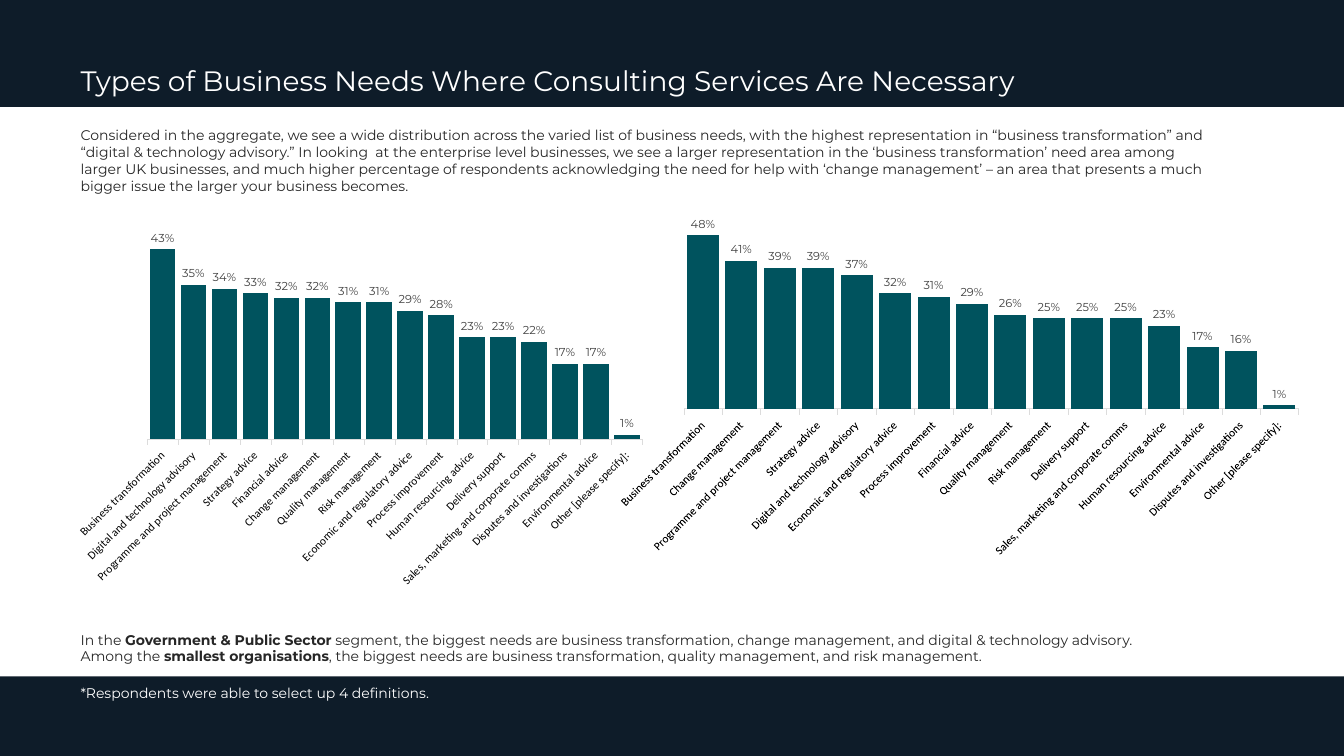
from dataclasses import dataclass

from lxml import etree
from pptx import Presentation
from pptx.chart.data import CategoryChartData
from pptx.dml.color import RGBColor
from pptx.enum.chart import XL_CHART_TYPE, XL_LABEL_POSITION, XL_TICK_MARK
from pptx.enum.shapes import MSO_SHAPE
from pptx.oxml import parse_xml
from pptx.oxml.ns import nsdecls
from pptx.util import Inches, Pt

COLUMN = XL_CHART_TYPE.COLUMN_CLUSTERED
OUTSIDE_END = XL_LABEL_POSITION.OUTSIDE_END
TICK_OUT = XL_TICK_MARK.OUTSIDE
RECT = MSO_SHAPE.RECTANGLE


@dataclass(frozen=True)
class Theme:
    navy: RGBColor = RGBColor(0x0E, 0x1C, 0x29)
    white: RGBColor = RGBColor(0xFF, 0xFF, 0xFF)
    ink: RGBColor = RGBColor(0x26, 0x26, 0x26)
    label: RGBColor = RGBColor(0x40, 0x40, 0x40)
    black: RGBColor = RGBColor(0, 0, 0)
    axis: RGBColor = RGBColor(0xDC, 0xDC, 0xDC)
    teal: RGBColor = RGBColor(0x00, 0x53, 0x5E)
    font: str = "Montserrat"
    axis_font: str = "Calibri"
    title: float = 20
    body: float = 10
    chart: float = 8.2


T = Theme()
SLIDE_W, SLIDE_H = 13.33, 7.5
INSET = 0.09

INTRO = (
    "Considered in the aggregate, we see a wide distribution across the varied list of business needs, "
    "with the highest representation in “business transformation” and “digital & technology advisory.” "
    "In looking  at the enterprise level businesses, we see a larger representation in the "
    "‘business transformation’ need area among larger UK businesses, and much higher percentage of "
    "respondents acknowledging the need for help with ‘change management’ – an area that presents a much "
    "bigger issue the larger your business becomes."
)
SEGMENTS = [
    ("In the ", False),
    ("Government & Public Sector", True),
    (" segment, the biggest needs are business transformation, change management, and digital & "
     "technology advisory. Among the ", False),
    ("smallest organisations", True),
    (", the biggest needs are business transformation, quality management, and risk management.", False),
]
ALL_NEEDS = [
    ("Business transformation", 0.43), ("Digital and technology advisory", 0.35),
    ("Programme and project management", 0.34), ("Strategy advice", 0.33),
    ("Financial advice", 0.32), ("Change management", 0.32),
    ("Quality management", 0.31), ("Risk management", 0.31),
    ("Economic and regulatory advice", 0.29), ("Process improvement", 0.28),
    ("Human resourcing advice", 0.23), ("Delivery support", 0.23),
    ("Sales, marketing and corporate comms", 0.22), ("Disputes and investigations", 0.17),
    ("Environmental advice", 0.17), ("Other [please specify]:", 0.01),
]
ENTERPRISE_NEEDS = [
    ("Business transformation", 0.48), ("Change management", 0.41),
    ("Programme and project management", 0.39), ("Strategy advice", 0.39),
    ("Digital and technology advisory", 0.37), ("Economic and regulatory advice", 0.32),
    ("Process improvement", 0.31), ("Financial advice", 0.29),
    ("Quality management", 0.26), ("Risk management", 0.25),
    ("Delivery support", 0.25), ("Sales, marketing and corporate comms", 0.25),
    ("Human resourcing advice", 0.23), ("Environmental advice", 0.17),
    ("Disputes and investigations", 0.16), ("Other [please specify]:", 0.01),
]


def set_font(font, name, size, color):
    font.name, font.size = name, Pt(size)
    font.color.rgb = color


def add_text(s, box, runs, size, color, spacing=None):
    """Place one paragraph of (text, bold) runs, its text starting at the box corner."""
    tf = s.shapes.add_textbox(*map(Inches, box)).text_frame
    tf.word_wrap = True
    tf.margin_left = tf.margin_right = tf.margin_top = tf.margin_bottom = 0
    p = tf.paragraphs[0]
    if spacing:
        p.line_spacing = spacing
    set_font(p.font, T.font, size, color)
    for text, bold in runs:
        r = p.add_run()
        r.text = text
        if bold:
            r.font.bold = True


def add_band(s, box, text_box, text, size, spacing=None):
    """Draw a navy band; text_box is relative to the band's corner."""
    sp = s.shapes.add_shape(RECT, *map(Inches, box))
    sp.shadow.inherit = False
    sp.fill.solid()
    sp.fill.fore_color.rgb = T.navy
    sp.line.fill.background()
    x, y, w, h = text_box
    add_text(s, (box[0] + x, box[1] + y, w, h), [(text, False)], size, T.white, spacing)


def set_plot_area(chart, plot):
    """Fix the inner plot area as fractions (x, y, w, h) of the chart."""
    area = chart._chartSpace.chart.plotArea
    for old in area.findall("{*}layout"):
        area.remove(old)
    layout = parse_xml(f'<c:layout {nsdecls("c")}><c:manualLayout><c:layoutTarget val="inner"/>'
                       '<c:xMode val="edge"/><c:yMode val="edge"/></c:manualLayout></c:layout>')
    for key, value in zip("xywh", plot):
        etree.SubElement(layout[0], layout[0][0].tag.replace("layoutTarget", key), val=str(value))
    area.insert(0, layout)


def add_needs_chart(s, box, needs, plot_area):
    data = CategoryChartData(number_format="0%")
    data.categories = [need for need, _ in needs]
    data.add_series("Series 1", [share for _, share in needs])
    chart = s.shapes.add_chart(COLUMN, *map(Inches, box), data).chart
    chart.has_legend = chart.has_title = False
    set_font(chart.font, T.axis_font, T.chart, T.black)

    values = chart.value_axis
    values.minimum_scale, values.maximum_scale = 0, 0.5
    values.has_major_gridlines = values.visible = False
    needs_axis = chart.category_axis
    needs_axis.major_tick_mark = TICK_OUT
    needs_axis.format.line.color.rgb = T.axis
    needs_axis.format.line.width = Pt(0.25)
    set_font(needs_axis.tick_labels.font, T.axis_font, T.chart, T.black)
    needs_axis._element.txPr.bodyPr.set("rot", "-2700000")

    plot = chart.plots[0]
    plot.gap_width = 20
    plot.vary_by_categories = False
    plot.series[0].format.fill.solid()
    plot.series[0].format.fill.fore_color.rgb = T.teal
    plot.has_data_labels = True
    labels = plot.data_labels
    labels.show_value = True
    labels.number_format, labels.number_format_is_linked = "0%", False
    labels.position = OUTSIDE_END
    set_font(labels.font, T.font, T.chart, T.label)
    set_plot_area(chart, plot_area)


def main():
    prs = Presentation()
    prs.slide_width, prs.slide_height = Inches(SLIDE_W), Inches(SLIDE_H)
    s = prs.slides.add_slide(prs.slide_layouts[6])
    left = 0.71 + INSET
    add_band(s, (0, 0, SLIDE_W, 1.06), (left, 0.67, 9.5, 0.39),
             "Types of Business Needs Where Consulting Services Are Necessary", T.title, 0.9)
    add_band(s, (0, 6.71, SLIDE_W, 0.79), (left, 0.08, 9.86, 0.2),
             "*Respondents were able to select up 4 definitions.", T.body)
    add_text(s, (left, 1.26, 11.25, 0.83), [(INTRO, False)], T.body, T.ink)
    add_needs_chart(s, (6.13, 2.11, 7.58, 3.89), ENTERPRISE_NEEDS, (0.08, 0.04, 0.81, 0.46))
    add_needs_chart(s, (0.64, 2.09, 5.85, 3.84), ALL_NEEDS, (0.14, 0.02, 0.84, 0.57))
    add_text(s, (left, 6.26, 10.72, 0.49), SEGMENTS, T.body, T.ink)
    prs.save("out.pptx")


if __name__ == "__main__":
    main()
